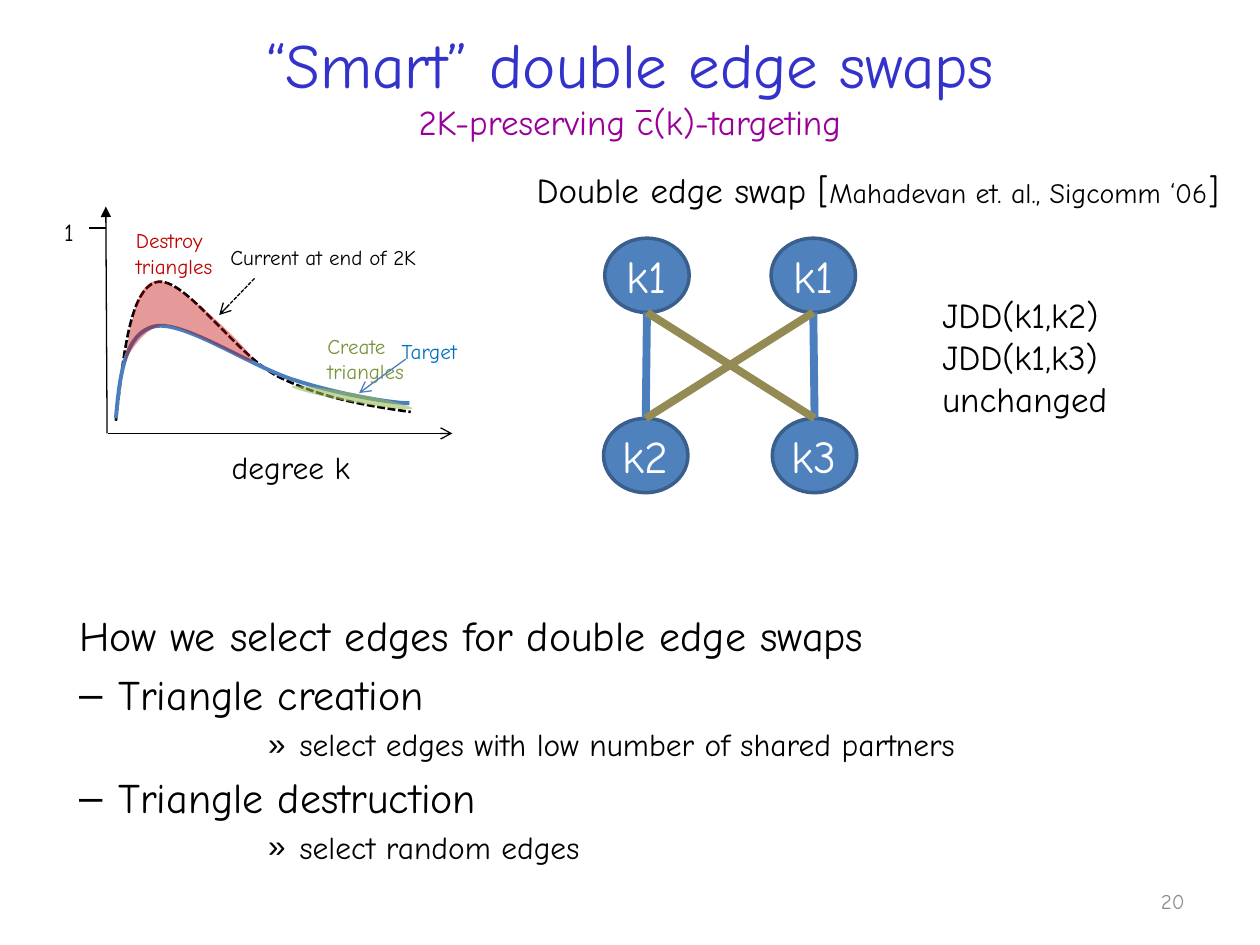
"""Builds the slide on smart double edge swaps."""
from lxml import etree
from pptx import Presentation
from pptx import util as u
from pptx.dml.color import RGBColor
from pptx.enum import dml, shapes, text
from pptx.oxml.ns import qn

FONT = "Comic Neue"
HUE = {"black": "000000", "white": "FFFFFF", "title": "3333CC", "sub": "990099",
       "grey": "8C8C8C", "node": "4F81BD", "rim": "3A5F8C", "edge": "4B7EBC",
       "swap": "948A54", "red": "C00000", "green": "9BBB59", "leaf": "77933C",
       "blue": "0070C0"}

TITLE = [[("“Smart” double edge swaps", 36, "title"), ("\n", 36, "title"),
          ("2K-preserving c(k)-targeting", 20, "sub")]]
HEAD = [[("Double edge swap [", 20, "black"),
         ("Mahadevan et. al., Sigcomm ‘06", 16, "black"), ("]", 20, "black")]]
LABELS = [
    ("1", 14, "black", (0.41, 1.67, 0.29, 0.34)),
    ("degree k", 18, "black", (1.74, 3.51, 1.23, 0.4)),
    ("Target", 12, "blue", (3.09, 2.64, 0.77, 0.3)),
    ("Destroy triangles", 12, "red", (0.98, 1.76, 1.07, 0.5)),
    ("Create triangles", 12, "leaf", (2.5, 2.6, 1.07, 0.5)),
    ("Current at end of 2K", 12, "black", (1.73, 1.89, 2.09, 0.3)),
]
JDD = ["JDD(k1,k2)", "JDD(k1,k3)", "unchanged"]
STEPS = [
    ("How we select edges for double edge swaps", 1, None),
    ("Triangle creation", 1, "–"),
    ("select edges with low number of shared partners", 4, "»"),
    ("Triangle destruction", 1, "–"),
    ("select random edges", 4, "»"),
]
LEVELS = {1: (24, 0.81, -0.31), 4: (18, 2.25, -0.25)}
NODES = [("k1", 4.8, 1.89), ("k2", 4.79, 3.32), ("k1", 6.12, 1.89), ("k3", 6.13, 3.32)]
WIDE, HIGH = 0.67, 0.59
LINKS = [(0, 1, "edge"), (2, 3, "edge"), (0, 3, "swap"), (2, 1, "swap")]
NOW = [(0.92, 3.34), (0.98, 2.82), (1.03, 2.3), (1.24, 2.24), (1.46, 2.18),
       (1.87, 2.82), (2.21, 2.99), (2.55, 3.16), (2.9, 3.22), (3.26, 3.27)]
GOAL = [(0.92, 3.32), (0.95, 2.98), (0.99, 2.64), (1.23, 2.59), (1.46, 2.54),
        (2.01, 2.92), (2.35, 3.02), (2.69, 3.13), (3.11, 3.2), (3.25, 3.2)]
GAP = [(1.01, 2.74), (1.06, 2.47), (1.11, 2.21), (1.27, 2.23), (1.44, 2.25),
       (2.01, 2.8), (2.01, 2.86), (2.02, 2.92), (1.48, 2.58), (1.31, 2.58),
       (1.14, 2.58), (0.99, 2.86), (0.99, 2.88)]
LINES = [
    ((0.85, 3.44), (0.84, 1.64), "black", 0.75, "triangle", False),
    ((0.86, 3.44), (3.59, 3.44), "black", 0.75, "arrow", False),
    ((0.71, 1.81), (0.84, 1.81), "black", 1.5, None, False),
    ((3.22, 2.85), (2.85, 3.12), "edge", 0.75, "arrow", False),
    ((2.02, 2.21), (1.74, 2.5), "black", 0.75, "arrow", True),
    ((5.05, 0.88), (5.17, 0.88), "sub", 1.5, None, False),
]

deck = Presentation()
deck.slide_width, deck.slide_height = u.Inches(10), u.Inches(7.5)
page = deck.slides.add_slide(deck.slide_layouts[6])


def rgb(name):
    return RGBColor.from_string(HUE[name])


def write(frame, paras, align="LEFT", anchor="TOP", wrap=True, side=0.1):
    frame.word_wrap = wrap
    frame.vertical_anchor = getattr(text.MSO_ANCHOR, anchor)
    frame.margin_left = frame.margin_right = u.Inches(side)
    for i, runs in enumerate(paras):
        para = frame.add_paragraph() if i else frame.paragraphs[0]
        para.alignment = getattr(text.PP_ALIGN, align)
        for words, size, hue in runs:
            if words == "\n":
                para.add_line_break()
                continue
            run = para.add_run()
            run.text = words
            run.font.name, run.font.size = FONT, u.Pt(size)
            run.font.color.rgb = rgb(hue)
    return frame


def label(paras, box, **form):
    return write(page.shapes.add_textbox(*map(u.Inches, box)).text_frame, paras, **form)


def stroke(line, hue, width, dash=False):
    line.color.rgb, line.width = rgb(hue), u.Pt(width)
    if dash:
        line.dash_style = dml.MSO_LINE.SQUARE_DOT


def paint(shape, hue, alpha=100):
    shape.shadow.inherit = False
    shape.fill.solid()
    shape.fill.fore_color.rgb = rgb(hue)
    if alpha < 100:
        tint = next(shape._element.spPr.iter(qn("a:srgbClr")))
        etree.SubElement(tint, qn("a:alpha"), val=str(alpha * 1000))
        shape.line.fill.background()


def oval(box):
    return page.shapes.add_shape(shapes.MSO_SHAPE.OVAL, *map(u.Inches, box))


def link(start, end, hue, width, tip=None, dash=False):
    line = page.shapes.add_connector(shapes.MSO_CONNECTOR.STRAIGHT,
                                     *map(u.Inches, start + end))
    stroke(line.line, hue, width, dash)
    if tip:
        etree.SubElement(line.line._get_or_add_ln(), qn("a:tailEnd"), type=tip)
    etree.SubElement(line._element.spPr, qn("a:effectLst"))


def curve(knots):
    dots = [(u.Inches(x), u.Inches(y)) for x, y in knots]
    pen = page.shapes.build_freeform(*dots[0])
    pen.add_line_segments(dots[1:], close=False)
    shape = pen.convert_to_shape()
    shape.shadow.inherit = False
    legs = list(shape._element.iter(qn("a:lnTo")))
    for i in range(0, len(legs), 3):
        bend = etree.Element(qn("a:cubicBezTo"))
        legs[i].addprevious(bend)
        for leg in legs[i:i + 3]:
            bend.append(leg[0])
            leg.getparent().remove(leg)
    return shape


label(TITLE, (0.5, 0.04, 9, 1.25), align="CENTER", anchor="MIDDLE")
label([[("20", 12, "grey")]], (7.17, 6.95, 2.33, 0.4), align="RIGHT", anchor="MIDDLE")

for knots, hue, width, dash in ((NOW, "black", 1.5, True), (GOAL, "edge", 2.25, False)):
    trace = curve(knots)
    trace.fill.background()
    stroke(trace.line, hue, width, dash)
paint(curve(GAP), "red", 40)
create = oval((2.31, 3.12, 0.97, 0.07))
create.rotation = 10.3
paint(create, "green", 60)

for words, size, hue, box in LABELS:
    label([[(words, size, hue)]], box, wrap=words != "degree k")

for name, x, y in NODES:
    node = oval((x, y, WIDE, HIGH))
    paint(node, "node")
    stroke(node.line, "rim", 2)
    write(node.text_frame, [[(name, 26, "white")]], align="CENTER", anchor="MIDDLE", side=0)
for top, low, hue in LINKS:
    (_, x1, y1), (_, x2, y2) = NODES[top], NODES[low]
    link((x1 + WIDE / 2, y1 + HIGH), (x2 + WIDE / 2, y2), hue, 4.5)
for row in LINES:
    link(*row)

label(HEAD, (4.16, 1.29, 6.12, 0.44))
label([[(words, 20, "black")] for words in JDD], (7.38, 2.28, 1.71, 1.11))

body = label([[(words, LEVELS[lvl][0], "black")] for words, lvl, _ in STEPS],
             (0.03, 4.79, 9.81, 2.16))
for para, (_, lvl, mark) in zip(body.paragraphs, STEPS):
    size, left, hang = LEVELS[lvl]
    para.level = lvl
    props = para._p.get_or_add_pPr()
    props.set("marL", str(u.Inches(left)))
    props.set("indent", str(u.Inches(hang)))
    before = etree.SubElement(props, qn("a:spcBef"))
    etree.SubElement(before, qn("a:spcPct"), val="20000")
    if mark:
        etree.SubElement(props, qn("a:buFont"), typeface="Arial")
        etree.SubElement(props, qn("a:buChar"), char=mark)
    else:
        etree.SubElement(props, qn("a:buNone"))

deck.save("out.pptx")
